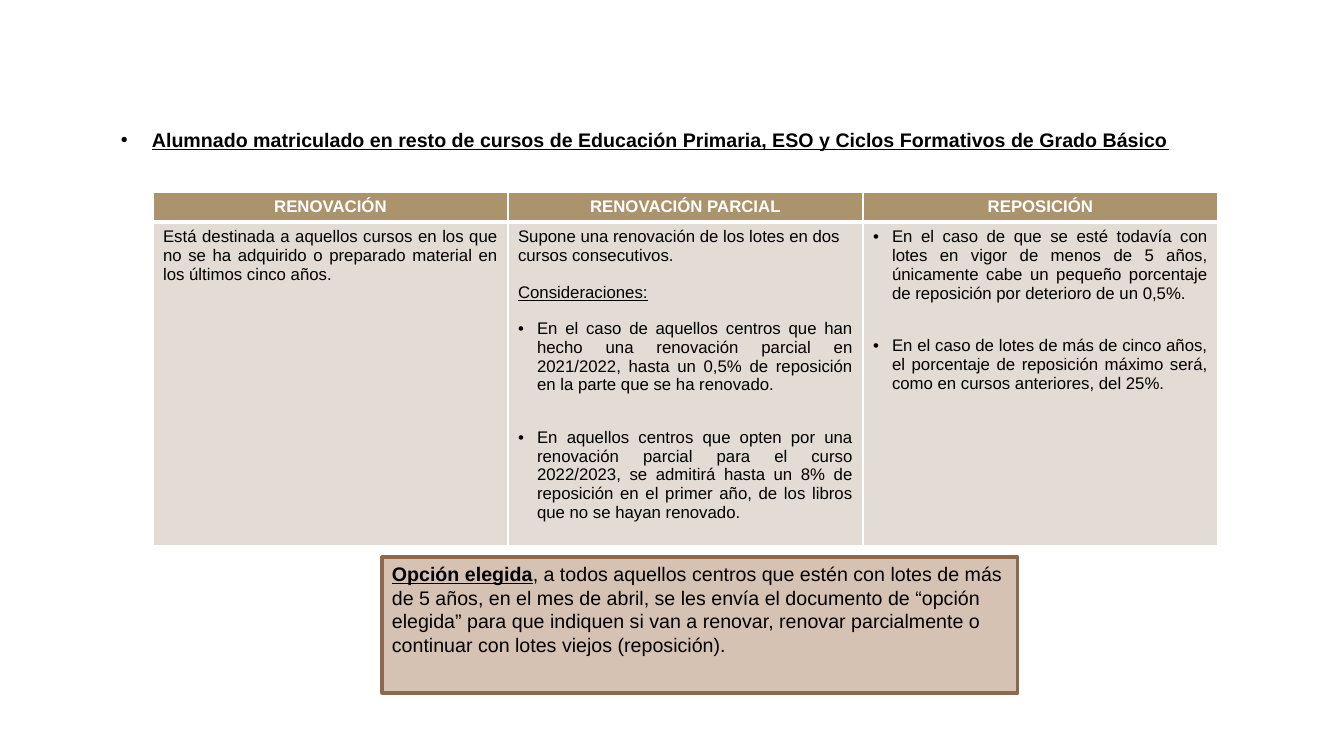
from dataclasses import dataclass

from lxml import etree
from pptx import Presentation
from pptx import util as u
from pptx.dml.color import RGBColor
from pptx.enum import shapes, text
from pptx.oxml import ns

SCALE = 914400 / 100.8  # EMU in one px
FONT = "Arial"
BLACK = RGBColor(0x00, 0x00, 0x00)
WHITE = RGBColor(0xFF, 0xFF, 0xFF)
GOLD = RGBColor(0xAB, 0x94, 0x6B)
SAND = RGBColor(0xE2, 0xDC, 0xD4)
TAN = RGBColor(0xD6, 0xC2, 0xB3)
BROWN = RGBColor(0x8E, 0x68, 0x4C)
LEFT = text.PP_ALIGN.LEFT
MID = text.PP_ALIGN.CENTER
JUST = text.PP_ALIGN.JUSTIFY


@dataclass
class Para:
    words: str
    align: text.PP_ALIGN = LEFT
    indent: int = 0  # px of hanging indent; a bullet shows when not zero
    before: float = 0
    after: float = 0
    under: bool = False


@dataclass
class Column:
    head: str
    body: list[Para]


def item(words: str, before: float = 12) -> Para:
    return Para(words, JUST, 19, before, 12)


TITLE = Para("Alumnado matriculado en resto de cursos de Educación Primaria, "
             "ESO y Ciclos Formativos de Grado Básico", indent=31, under=True)
COLUMNS = [
    Column("RENOVACIÓN", [
        Para("Está destinada a aquellos cursos en los que no se ha adquirido o "
             "preparado material en los últimos cinco años.", JUST)]),
    Column("RENOVACIÓN PARCIAL", [
        Para("Supone una renovación de los lotes en dos cursos consecutivos."),
        Para("Consideraciones:", before=13.3, under=True),
        item("En el caso de aquellos centros que han hecho una renovación parcial en "
             "2021/2022, hasta un 0,5% de reposición en la parte que se ha renovado."),
        item("En aquellos centros que opten por una renovación parcial para el curso "
             "2022/2023, se admitirá hasta un 8% de reposición en el primer año, "
             "de los libros que no se hayan renovado.")]),
    Column("REPOSICIÓN", [
        item("En el caso de que se esté todavía con lotes en vigor de menos de 5 años, "
             "únicamente cabe un pequeño porcentaje de reposición por deterioro de un 0,5%.", 0),
        item("En el caso de lotes de más de cinco años, el porcentaje de reposición "
             "máximo será, como en cursos anteriores, del 25%.")]),
]
CHOICE = [
    ("Opción elegida", True),
    (", a todos aquellos centros que estén con lotes de más de 5 años, en el mes de abril, "
     "se les envía el documento de “opción elegida” para que indiquen si van a renovar, "
     "renovar parcialmente o continuar con lotes viejos (reposición).", False),
]


def px(n: int) -> u.Emu:
    return u.Emu(round(n * SCALE))


def style(font, size: int, color: RGBColor, bold: bool, under: bool) -> None:
    font.name, font.size = FONT, u.Pt(size)
    font.bold, font.underline = bold, under
    font.color.rgb = color


def write(frame, paras: list[Para], size: int, color: RGBColor, bold: bool) -> None:
    for i, para in enumerate(paras):
        p = frame.add_paragraph() if i else frame.paragraphs[0]
        p.text, p.alignment = para.words, para.align
        p.space_before, p.space_after = u.Pt(para.before), u.Pt(para.after)
        if para.indent:
            props = p._p.get_or_add_pPr()
            props.set("marL", str(px(para.indent)))
            props.set("indent", str(-px(para.indent)))
            etree.SubElement(props, ns.qn("a:buFont")).set("typeface", FONT)
            etree.SubElement(props, ns.qn("a:buChar")).set("char", "•")
        style(p.runs[0].font, size, color, bold, para.under)


def edge(cell, side: str, points: float) -> None:
    line = etree.SubElement(cell._tc.get_or_add_tcPr(), ns.qn(f"a:ln{side}"), w=str(u.Pt(points)))
    fill = etree.SubElement(line, ns.qn("a:solidFill"))
    etree.SubElement(fill, ns.qn("a:srgbClr")).set("val", str(WHITE))


def fill_cell(cell, paras: list[Para], head: bool) -> None:
    for side in "LRTB":
        edge(cell, side, 3 if side == ("B" if head else "T") else 1)
    cell.fill.solid()
    cell.fill.fore_color.rgb = GOLD if head else SAND
    write(cell.text_frame, paras, 12, WHITE if head else BLACK, head)


def main() -> None:
    deck = Presentation()
    deck.slide_width, deck.slide_height = px(1344), px(756)
    slide = deck.slides.add_slide(deck.slide_layouts[6])

    # Heading
    box = slide.shapes.add_textbox(px(111), px(123), px(1121), px(65))
    box.text_frame.word_wrap = True
    write(box.text_frame, [TITLE], 14, BLACK, True)

    # Table of the three options
    grid = slide.shapes.add_table(2, len(COLUMNS), px(153), px(192), px(1065), px(352)).table
    for row, high in zip(grid.rows, (29, 323)):
        row.height = px(high)
    for i, col in enumerate(COLUMNS):
        grid.columns[i].width = px(355)
        fill_cell(grid.cell(0, i), [Para(col.head, MID)], True)
        fill_cell(grid.cell(1, i), col.body, False)

    # Note on the chosen option
    note = slide.shapes.add_shape(shapes.MSO_SHAPE.RECTANGLE, px(382), px(557), px(636), px(136))
    note.shadow.inherit = False
    note.fill.solid()
    note.fill.fore_color.rgb = TAN
    note.line.color.rgb = BROWN
    note.line.width = u.Pt(2.25)
    frame = note.text_frame
    frame.word_wrap = True
    frame.vertical_anchor = text.MSO_ANCHOR.TOP
    p = frame.paragraphs[0]
    p.alignment = LEFT
    for words, strong in CHOICE:
        run = p.add_run()
        run.text = words
        style(run.font, 14, BLACK, strong, strong)

    deck.save("out.pptx")


if __name__ == "__main__":
    main()
